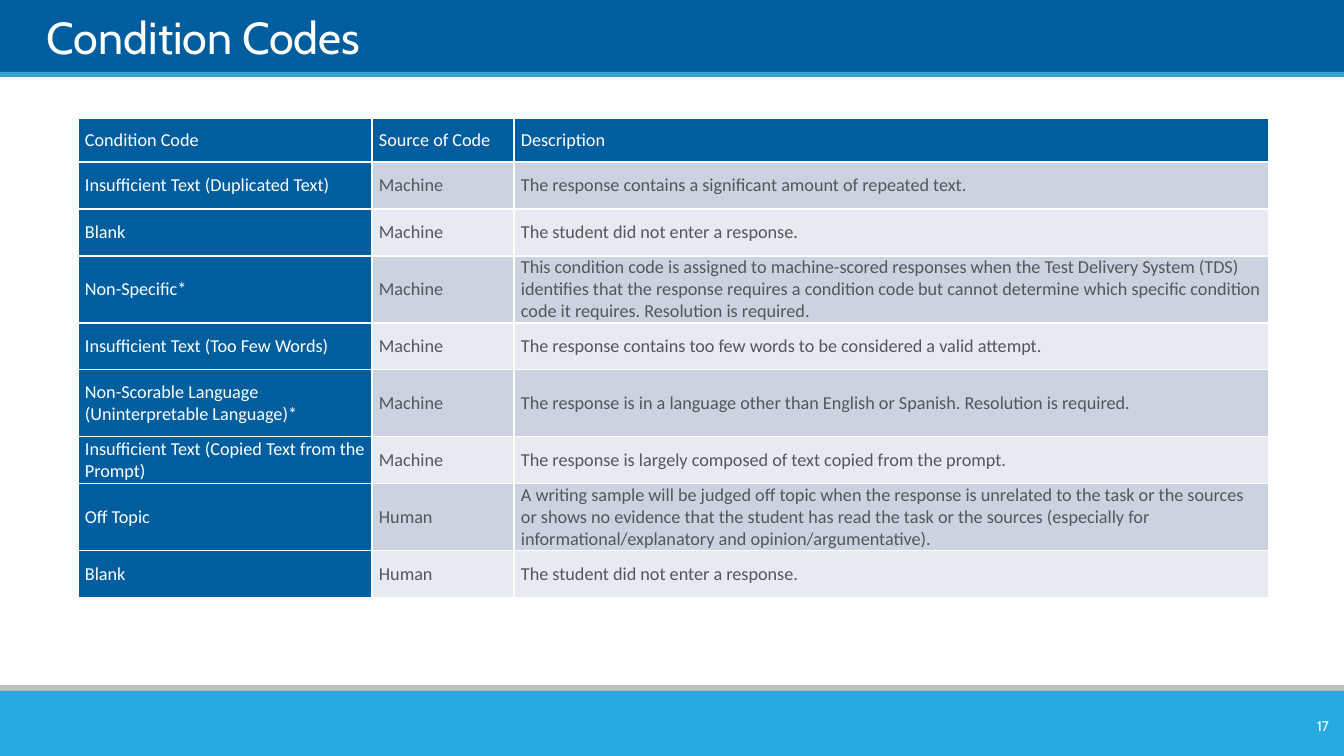
from lxml import etree
from pptx import Presentation
from pptx.dml.color import RGBColor
from pptx.enum.shapes import MSO_SHAPE
from pptx.enum.text import MSO_ANCHOR, PP_ALIGN
from pptx.oxml.ns import qn
from pptx.util import Pt

RECT = MSO_SHAPE.RECTANGLE
MIDDLE, BOTTOM = MSO_ANCHOR.MIDDLE, MSO_ANCHOR.BOTTOM
LEFT, RIGHT = PP_ALIGN.LEFT, PP_ALIGN.RIGHT

NAVY, WHITE, GRAY = "005E9E", "FFFFFF", "53565A"
BANDS = ("CCD2DF", "E7EAF0")
COLS = (294, 142, 755)
HEAD, ROW, TALL = 44, 47, 67

CODES = [
    ("Condition Code", "Source of Code", "Description", HEAD),
    ("Insufficient Text (Duplicated Text)", "Machine",
     "The response contains a significant amount of repeated text.", ROW),
    ("Blank", "Machine", "The student did not enter a response.", ROW),
    ("Non-Specific*", "Machine",
     "This condition code is assigned to machine-scored responses when the "
     "Test Delivery System (TDS) identifies that the response requires a "
     "condition code but cannot determine which specific condition code it "
     "requires. Resolution is required.", TALL),
    ("Insufficient Text (Too Few Words)", "Machine",
     "The response contains too few words to be considered a valid attempt.", ROW),
    ("Non-Scorable Language (Uninterpretable Language)*", "Machine",
     "The response is in a language other than English or Spanish. "
     "Resolution is required.", TALL),
    ("Insufficient Text (Copied Text from the Prompt)", "Machine",
     "The response is largely composed of text copied from the prompt.", ROW),
    ("Off Topic", "Human",
     "A writing sample will be judged off topic when the response is unrelated "
     "to the task or the sources or shows no evidence that the student has read "
     "the task or the sources (especially for informational/explanatory and "
     "opinion/argumentative).", TALL),
    ("Blank", "Human", "The student did not enter a response.", ROW),
]


def px(n):
    return round(n * 914400 / 100.8)


def color(code):
    return RGBColor.from_string(code)


def apply(target, values):
    for name, value in values.items():
        setattr(target, name, value)


def edge(cell, code, width):
    """Draw the four borders of a cell, ahead of its fill."""
    props = cell._tc.get_or_add_tcPr()
    for spot, side in enumerate(("lnL", "lnR", "lnT", "lnB")):
        line = etree.Element(qn(f"a:{side}"), w=str(Pt(width)))
        fill = etree.SubElement(line, qn("a:solidFill"))
        etree.SubElement(fill, qn("a:srgbClr"), val=code)
        props.insert(spot, line)


class Deck:
    def __init__(self, wide, high):
        self.show = Presentation()
        apply(self.show, {"slide_width": px(wide), "slide_height": px(high)})
        self.slide = self.show.slides.add_slide(self.show.slide_layouts[5])

    def text(self, frame, words, size, face, ink, align=LEFT):
        para = frame.paragraphs[0]
        para.alignment = align
        run = para.add_run()
        run.text = words
        apply(run.font, {"size": Pt(size), "name": face, "bold": False})
        run.font.color.rgb = color(ink)

    def frame(self, shape, anchor):
        apply(shape.text_frame, {
            "word_wrap": True, "vertical_anchor": anchor,
            "margin_left": 0, "margin_right": 0,
            "margin_top": 0, "margin_bottom": 0})
        return shape.text_frame

    def band(self, top, high, code):
        """Lay a full-width stripe behind the title."""
        bar = self.slide.shapes.add_shape(
            RECT, 0, px(top), self.show.slide_width, px(high))
        bar.shadow.inherit = False
        bar.fill.solid()
        bar.fill.fore_color.rgb = color(code)
        bar.line.fill.background()
        self.slide.shapes.title.element.addprevious(bar.element)

    def title(self, words, left, top, wide, high):
        box = self.slide.shapes.title
        apply(box, {"left": px(left), "top": px(top),
                    "width": px(wide), "height": px(high)})
        self.text(self.frame(box, BOTTOM), words, 32, "Cabin", WHITE)

    def label(self, words, left, top, wide, high):
        box = self.slide.shapes.add_textbox(px(left), px(top), px(wide), px(high))
        self.text(self.frame(box, MIDDLE), words, 10, "Cabin", WHITE, RIGHT)

    def table(self, rows, left, top):
        high = sum(row[-1] for row in rows)
        grid = self.slide.shapes.add_table(
            len(rows), len(COLS), px(left), px(top), px(sum(COLS)), px(high)).table
        apply(grid, {"first_row": False, "horz_banding": False})
        for col, wide in zip(grid.columns, COLS):
            col.width = px(wide)
        for r, (*texts, tall) in enumerate(rows):
            grid.rows[r].height = px(tall)
            for c, words in enumerate(texts):
                key = r == 0 or c == 0
                self.cell(grid.cell(r, c), words, NAVY if key else BANDS[(r - 1) % 2],
                          WHITE if key else GRAY)

    def cell(self, cell, words, code, ink):
        apply(cell, {"margin_left": px(7), "margin_right": px(7), "margin_top": 0,
                     "margin_bottom": 0, "vertical_anchor": MIDDLE})
        cell.fill.solid()
        cell.fill.fore_color.rgb = color(code)
        edge(cell, WHITE, 1)
        self.text(cell.text_frame, words, 13, "Calibri", ink)


def main():
    deck = Deck(1344, 756)
    deck.band(-1, 76, NAVY)
    deck.band(72, 5, "35A0CE")
    deck.band(685, 14, "BFBFBF")
    deck.band(691, 65, "27AAE1")
    deck.title("Condition Codes", 47, 7, 1253, 57)
    deck.table(CODES, 78, 118)
    deck.label("17", 1261, 711, 68, 30)
    deck.show.save("out.pptx")


if __name__ == "__main__":
    main()
